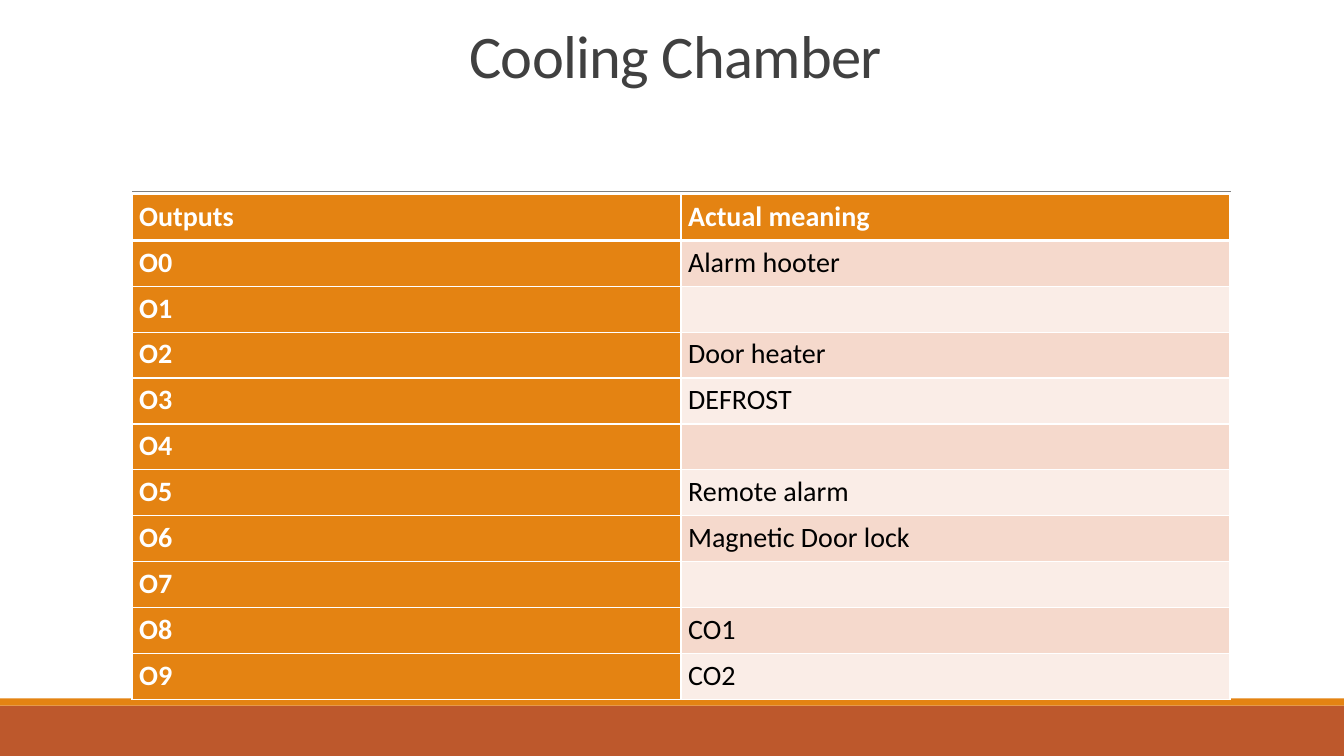
from dataclasses import dataclass

from lxml.etree import SubElement
from pptx import Presentation
from pptx.dml.color import RGBColor as RGB
from pptx.enum.shapes import MSO_CONNECTOR as Connector, MSO_SHAPE as Shape
from pptx.enum.text import MSO_ANCHOR as Anchor, PP_ALIGN as Align
from pptx.oxml.ns import qn
from pptx.util import Inches, Pt


@dataclass(frozen=True)
class Theme:
    font: str = "Calibri"
    title_size: float = 43.2
    table_size: float = 20
    title: str = "404040"
    text: str = "000000"
    light: str = "FFFFFF"
    rule: str = "808080"
    accent: str = "E48312"
    footer: str = "BD582C"
    bands: tuple = ("F5D9CC", "FAEDE7")


OUTPUTS = ["Alarm hooter", "", "Door heater", "DEFROST", "", "Remote alarm",
           "Magnetic Door lock", "", "CO1", "CO2"]
ROWS = [("Outputs", "Actual meaning")]
ROWS += [(f"O{number}", meaning) for number, meaning in enumerate(OUTPUTS)]


def apply(target, values):
    for name, value in values.items():
        setattr(target, name, value)


class SlideBuilder:
    def __init__(self, slide, theme):
        self.shapes = slide.shapes
        self.theme = theme

    def add_words(self, paragraph, text, size, color, bold=False):
        run = paragraph.add_run()
        run.text = text
        apply(run.font, {"name": self.theme.font, "size": Pt(size), "bold": bold})
        run.font.color.rgb = RGB.from_string(color)
        return run

    def bar(self, top, height, color):
        """Add a full-width band."""
        bar = self.shapes.add_shape(Shape.RECTANGLE, 0, Inches(top),
                                    Inches(13.33), Inches(height))
        bar.shadow.inherit = False
        bar.fill.solid()
        bar.fill.fore_color.rgb = RGB.from_string(color)
        bar.line.fill.background()

    def rule(self, left, right, y):
        rule = self.shapes.add_connector(Connector.STRAIGHT, Inches(left), Inches(y),
                                         Inches(right), Inches(y))
        rule.line.width = Pt(0.5)
        rule.line.color.rgb = RGB.from_string(self.theme.rule)
        SubElement(rule._element.spPr, qn("a:effectLst"))

    def title(self, text, left, top, width, height):
        frame = self.shapes.add_textbox(Inches(left), Inches(top), Inches(width),
                                        Inches(height)).text_frame
        apply(frame, {"word_wrap": True, "vertical_anchor": Anchor.BOTTOM})
        heading = frame.paragraphs[0]
        apply(heading, {"alignment": Align.CENTER, "line_spacing": 0.85})
        run = self.add_words(heading, text, self.theme.title_size, self.theme.title)
        run._r.get_or_add_rPr().set("spc", "-50")

    def borders(self, cell, bottom):
        """Draw light cell edges; they must precede the fill in the cell properties."""
        properties = cell._tc.get_or_add_tcPr()
        for side, width in {"L": 1, "R": 1, "T": 1, "B": bottom}.items():
            edge = SubElement(properties, qn(f"a:ln{side}"), w=str(Pt(width)))
            fill = SubElement(edge, qn("a:solidFill"))
            SubElement(fill, qn("a:srgbClr"), val=self.theme.light)

    def cell(self, cell, text, fill, color, bold, bottom):
        apply(cell, {"margin_left": Inches(0.07), "margin_right": Inches(0.07),
                     "margin_top": 0, "margin_bottom": 0})
        self.borders(cell, bottom)
        cell.fill.solid()
        cell.fill.fore_color.rgb = RGB.from_string(fill)
        if text:
            paragraph = cell.text_frame.paragraphs[0]
            paragraph.line_spacing = 1.15
            self.add_words(paragraph, text, self.theme.table_size, color, bold)

    def table(self, rows, left, top, width, height):
        theme = self.theme
        table = self.shapes.add_table(len(rows), len(rows[0]), Inches(left), Inches(top),
                                      Inches(width), Inches(height)).table
        for r, row in enumerate(rows):
            for c, text in enumerate(row):
                is_header = r == 0 or c == 0
                fill = theme.accent if is_header else theme.bands[(r - 1) % 2]
                color = theme.light if is_header else theme.text
                self.cell(table.cell(r, c), text, fill, color, is_header,
                          bottom=3 if r == 0 else 1)


def main():
    deck = Presentation()
    apply(deck, {"slide_width": Inches(13.33), "slide_height": Inches(7.5)})
    theme = Theme()
    builder = SlideBuilder(deck.slides.add_slide(deck.slide_layouts[6]), theme)
    builder.bar(7, 0.5, theme.footer)
    builder.bar(6.93, 0.07, theme.accent)
    builder.rule(1.31, 12.21, 1.9)
    builder.title("Cooling Chamber", 1.2, 0.31, 11, 0.64)
    builder.table(ROWS, 1.31, 1.93, 10.89, 5.01)
    deck.save("out.pptx")


if __name__ == "__main__":
    main()
